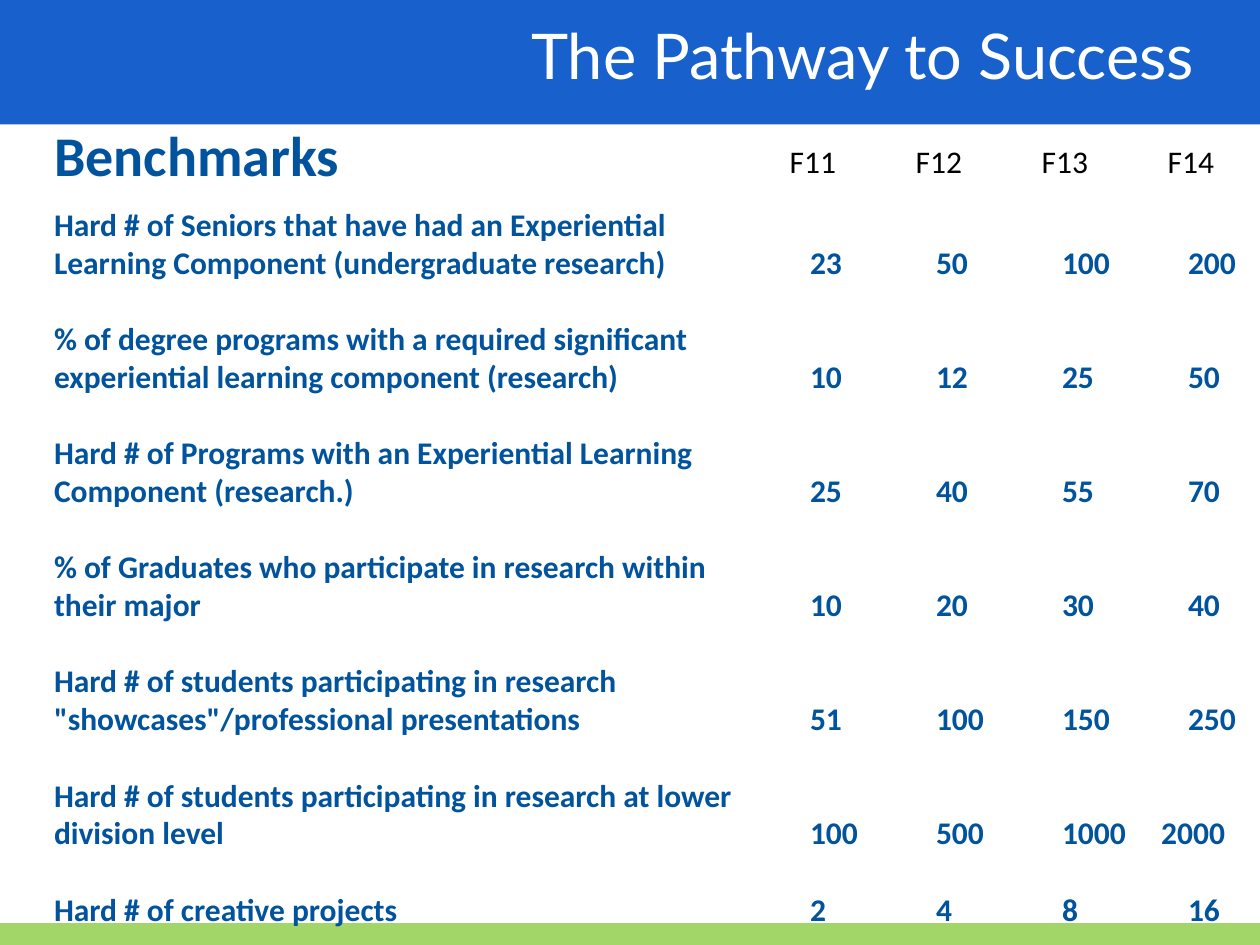
from lxml.etree import SubElement
from pptx import Presentation
from pptx.dml.color import RGBColor
from pptx.enum.shapes import MSO_CONNECTOR, MSO_SHAPE
from pptx.enum.text import MSO_ANCHOR, MSO_AUTO_SIZE, PP_ALIGN
from pptx.oxml.ns import qn
from pptx.util import Cm, Pt

WIDTH, HEIGHT = 25.4, 19.05
NAVY = "00539C"
COLUMN = 2.54
FIRST_VALUE = 15.24
VALUE_STOPS = [FIRST_VALUE + i * COLUMN for i in range(4)]
WIDE_STOPS = VALUE_STOPS[:3] + [22.32]
YEARS = ["F11", "F12", "F13", "F14"]
BENCHMARKS = [
    (["Hard # of Seniors that have had an Experiential",
      "Learning Component (undergraduate research)"], [23, 50, 100, 200]),
    (["% of degree programs with a required significant",
      "experiential learning component (research)"], [10, 12, 25, 50]),
    (["Hard # of Programs with an Experiential Learning",
      "Component (research.)"], [25, 40, 55, 70]),
    (["% of Graduates who participate in research within",
      "their major"], [10, 20, 30, 40]),
    (["Hard # of students participating in research",
      "\"showcases\"/professional presentations"], [51, 100, 150, 250]),
    (["Hard # of students participating in research at lower",
      "division level"], [100, 500, 1000, 2000]),
    (["Hard # of creative projects"], [2, 4, 8, 16]),
]


def rgb(value):
    return RGBColor.from_string(value)


def set_tabs(p, stops):
    tabs = SubElement(p._p.get_or_add_pPr(), qn("a:tabLst"))
    for stop in stops:
        SubElement(tabs, qn("a:tab"), pos=str(Cm(stop)), algn="l")


def add_text(tf, text, size=18, color=NAVY, bold=False, font="Calibri",
             align=PP_ALIGN.LEFT, before=0, spacing=None, stops=()):
    p = tf.paragraphs[0]
    if p.runs:
        p = tf.add_paragraph()
    p.alignment = align
    p.space_before = Pt(before)
    if spacing:
        p.line_spacing = Pt(spacing)
    if stops:
        set_tabs(p, stops)
    r = p.add_run()
    r.text = text
    r.font.size = Pt(size)
    r.font.name = font
    r.font.bold = bold
    r.font.color.rgb = rgb(color)


def add_box(s, x, y, w, h, wrap=True):
    tf = s.shapes.add_textbox(Cm(x), Cm(y), Cm(w), Cm(h)).text_frame
    tf.word_wrap = wrap
    return tf


def add_footer(s, x, y, w):
    line = s.shapes.add_connector(MSO_CONNECTOR.STRAIGHT,
                                  Cm(x + w), Cm(y), Cm(x), Cm(y))
    line.line.color.rgb = rgb("A2D668")
    line.line.width = Pt(14)
    SubElement(line._element.spPr, qn("a:effectLst"))


def add_header(s, x, y, w, h):
    band = s.shapes.add_shape(MSO_SHAPE.RECTANGLE, Cm(x), Cm(y), Cm(w), Cm(h))
    band.shadow.inherit = False
    band.fill.solid()
    band.fill.fore_color.rgb = rgb("0F5BCB")
    color = band._element.spPr.find(qn("a:solidFill"))[0]
    SubElement(color, qn("a:alpha"), val="96000")
    band.line.fill.background()

    title = s.shapes.title
    band._element.addnext(title._element)
    title.left, title.top = Cm(x + 0.2), Cm(y + 0.2)
    title.width, title.height = Cm(w - 1.27), Cm(1.8)
    tf = title.text_frame
    tf.auto_size = MSO_AUTO_SIZE.NONE
    tf.vertical_anchor = MSO_ANCHOR.TOP
    add_text(tf, "The Pathway to Success", size=36, color="FFFFFF",
             font="Lato", align=PP_ALIGN.RIGHT)


def add_benchmarks(s, x, y, w, h):
    add_text(add_box(s, x, y, 14, 1.42), "Benchmarks",
             size=32, bold=True, spacing=32)
    tf = add_box(s, x, y + 1.47, w, h - 1.47)
    for i, (lines, values) in enumerate(BENCHMARKS):
        stops = WIDE_STOPS if min(values[2:]) >= 1000 else VALUE_STOPS
        for j, line in enumerate(lines):
            last = j == len(lines) - 1
            text = "\t".join([line, *map(str, values)]) if last else line
            add_text(tf, text, bold=True, before=22 if i and not j else 0,
                     stops=stops if last else ())
    years = add_box(s, x + 14.83, y + 0.2, 9.14, 1.02, wrap=False)
    add_text(years, "\t".join(YEARS), color="000000",
             stops=[COLUMN * i for i in range(1, len(YEARS))])


def main():
    prs = Presentation()
    prs.slide_width, prs.slide_height = Cm(WIDTH), Cm(HEIGHT)
    s = prs.slides.add_slide(prs.slide_layouts[5])
    add_footer(s, 0, 18.85, WIDTH)
    add_header(s, 0, 0, WIDTH, 2.51)
    add_benchmarks(s, 0.84, 2.54, WIDTH - 0.84, HEIGHT - 2.54)
    prs.save("out.pptx")


if __name__ == "__main__":
    main()
